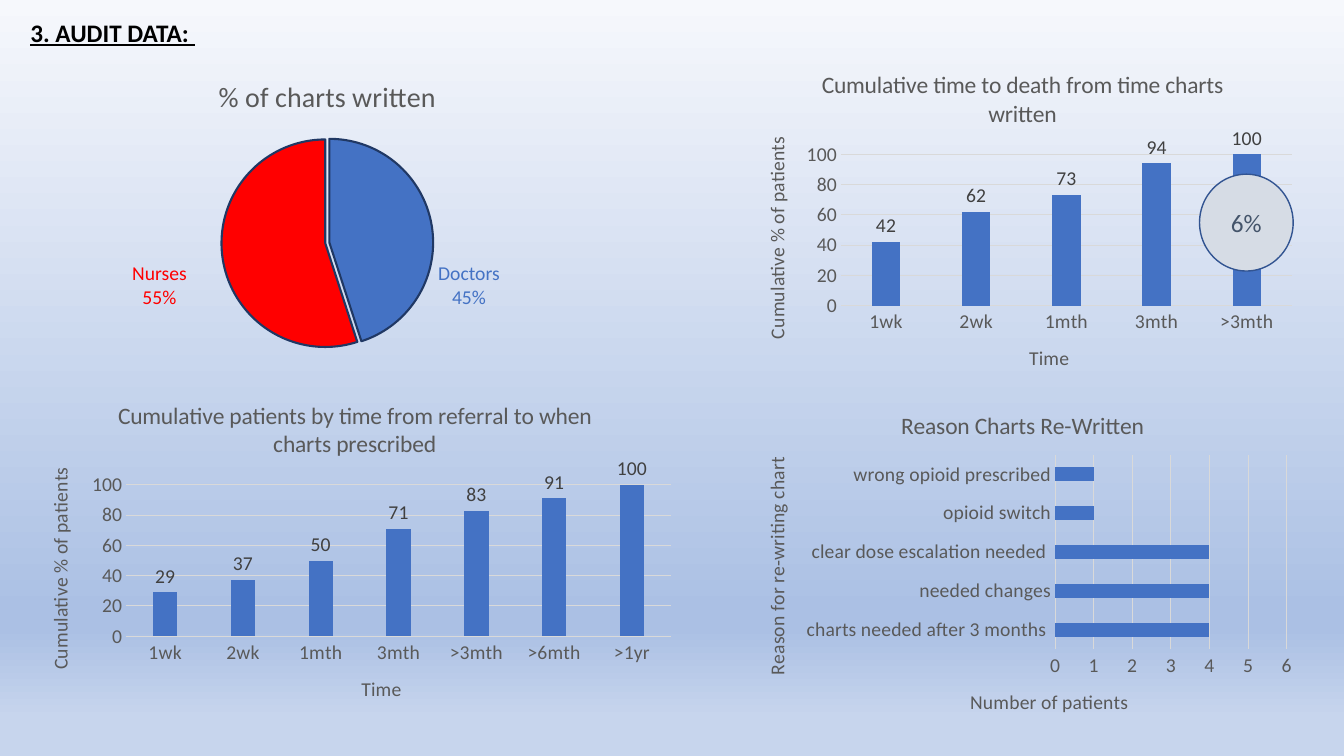
from lxml import etree
from pptx import Presentation
from pptx import util as u
from pptx.chart import data as cd
from pptx.dml.color import RGBColor
from pptx.enum import chart as ch, shapes, text
from pptx.oxml.ns import qn

GREY, DARK, GRID = "595959", "404040", "D9D9D9"
BLUE, RED, BLACK = "4472C4", "FF0000", "000000"


def rgb(code):
    return RGBColor.from_string(code)


def style(font, size=14, color=GREY, bold=False, line=False):
    font.name, font.size = "Calibri", u.Pt(size)
    font.bold, font.underline = bold, line
    font.color.rgb = rgb(color)


def write(para, words, align=None, **form):
    run = para.add_run()
    run.text = words
    style(run.font, **form)
    if align is not None:
        para.alignment = align


def stroke(line, color, width=0.75):
    line.color.rgb = rgb(color)
    line.width = u.Pt(width)


class Page:
    def __init__(self, deck):
        self.slide = deck.slides.add_slide(deck.slide_layouts[5])

    def back(self, stops):
        fill = self.slide.background.fill
        fill.gradient()
        fill.gradient_angle = 270
        group = self.slide.element.find(".//" + qn("a:gsLst"))
        for stop in list(group):
            group.remove(stop)
        for place, color in stops:
            stop = etree.SubElement(group, qn("a:gs"), pos=str(place * 1000))
            etree.SubElement(stop, qn("a:srgbClr"), val=color)

    def title(self, words, box):
        shape = self.slide.shapes.title
        shape.left, shape.top, shape.width, shape.height = map(u.Cm, box)
        frame = shape.text_frame
        frame.word_wrap = False
        frame.vertical_anchor = text.MSO_ANCHOR.TOP
        write(frame.paragraphs[0], words, text.PP_ALIGN.LEFT,
              size=18, color=BLACK, bold=True, line=True)

    def labels(self, rows, colors, tabs, box):
        frame = self.slide.shapes.add_textbox(*map(u.Cm, box)).text_frame
        frame.word_wrap = True
        for i, row in enumerate(rows):
            para = frame.paragraphs[0] if i == 0 else frame.add_paragraph()
            stops = etree.SubElement(para._p.get_or_add_pPr(), qn("a:tabLst"))
            for tab in tabs:
                etree.SubElement(stops, qn("a:tab"), pos=str(u.Cm(tab)), algn="ctr")
            for words, color in zip(row, colors):
                write(para, "\t" + words, color=color)

    def disc(self, words, box):
        shape = self.slide.shapes.add_shape(shapes.MSO_SHAPE.OVAL, *map(u.Cm, box))
        shape.shadow.inherit = False
        shape.fill.solid()
        shape.fill.fore_color.rgb = rgb("D6DCE5")
        stroke(shape.line, "325491", 1)
        shape.text_frame.vertical_anchor = text.MSO_ANCHOR.MIDDLE
        write(shape.text_frame.paragraphs[0], words, text.PP_ALIGN.CENTER,
              size=18, color="44546A")

    def chart(self, kind, head, cats, vals, box, size=16.8):
        data = cd.CategoryChartData()
        data.categories = cats
        data.add_series("Series 1", vals)
        chart = self.slide.shapes.add_chart(kind, *map(u.Cm, box), data).chart
        style(chart.font, color=BLACK)
        chart.has_legend = False
        chart.has_title = True
        write(chart.chart_title.text_frame.paragraphs[0], head, size=size)
        chart.chart_title.include_in_layout = False
        return chart

    def pie(self, head, cats, vals, colors, box):
        plot = self.chart(ch.XL_CHART_TYPE.PIE, head, cats, vals, box, 20).plots[0]
        series = plot.series[0]
        for i, color in enumerate(colors):
            form = series.points[i].format
            form.fill.solid()
            form.fill.fore_color.rgb = rgb(color)
            stroke(form.line, "203864", 1.5)
        burst = etree.Element(qn("c:explosion"), val="2")
        series._element.find(qn("c:dPt")).addprevious(burst)

    def axis(self, axis, name, turn):
        axis.has_title = True
        frame = axis.axis_title.text_frame
        write(frame.paragraphs[0], name)
        frame._txBody.bodyPr.set("rot", "-5400000" if turn else "0")
        axis.major_tick_mark = axis.minor_tick_mark = ch.XL_TICK_MARK.NONE
        style(axis.tick_labels.font)

    def bars(self, head, names, cats, vals, box, top, step, flat=False):
        types = ch.XL_CHART_TYPE
        kind = types.BAR_CLUSTERED if flat else types.COLUMN_CLUSTERED
        chart = self.chart(kind, head, cats, vals, box)
        cat, val = chart.category_axis, chart.value_axis
        self.axis(cat, names[0], flat)
        self.axis(val, names[1], not flat)
        stroke(cat.format.line, GRID)
        val.format.line.fill.background()
        stroke(val.major_gridlines.format.line, GRID)
        val.minimum_scale, val.maximum_scale, val.major_unit = 0, top, step
        val.tick_labels.number_format = "0"
        val.tick_labels.number_format_is_linked = False
        plot = chart.plots[0]
        plot.vary_by_categories = False
        plot.gap_width = 182 if flat else 219
        fill = plot.series[0].format.fill
        fill.solid()
        fill.fore_color.rgb = rgb(BLUE)
        if not flat:
            plot.overlap = -27
            plot.has_data_labels = True
            tags = plot.data_labels
            tags.show_value = True
            tags.position = ch.XL_LABEL_POSITION.OUTSIDE_END
            style(tags.font, color=DARK)


def main():
    deck = Presentation()
    deck.slide_width, deck.slide_height = u.Cm(33.87), u.Cm(19.05)
    page = Page(deck)
    page.back([(0, "F6F8FC"), (81, "ABC0E4"), (83, "ABC0E4"), (95, "C7D5ED")])
    page.title("3. AUDIT DATA: ", (0.51, 0.3, 4.7, 1.02))

    # Who wrote the charts
    page.pie("% of charts written", ["1", "2"], [45, 55], [BLUE, RED],
             (1.9, 1.52, 12.7, 7.62))
    page.labels([("Nurses", "Doctors"), ("55%", "45%")], (RED, BLUE),
                (0.7, 8.5), (3.07, 6.45, 9.86, 1.45))

    # Cumulative columns
    names = ("Time", "Cumulative % of patients")
    times = ["1wk", "2wk", "1mth", "3mth", ">3mth"]
    page.bars("Cumulative patients by time from referral to when charts prescribed",
              names, times + [">6mth", ">1yr"], [29, 37, 50, 71, 83, 91, 100],
              (0.63, 9.65, 16.61, 8.59), 100, 20)
    page.bars("Cumulative time to death from time charts written",
              names, times, [42, 62, 73, 94, 100],
              (18.69, 1.32, 14.15, 8.59), 100, 20)
    page.disc("6%", (30.23, 4.39, 2.36, 2.44))

    # Reasons for writing again
    reasons = ["charts needed after 3 months ", "needed changes",
               "clear dose escalation needed ", "opioid switch",
               "wrong opioid prescribed"]
    page.bars("Reason Charts Re-Written",
              ("Reason for re-writing chart", "Number of patients"),
              reasons, [4, 4, 4, 1, 1], (18.69, 9.91, 14.15, 8.66), 6, 1, flat=True)

    deck.save("out.pptx")


if __name__ == "__main__":
    main()
